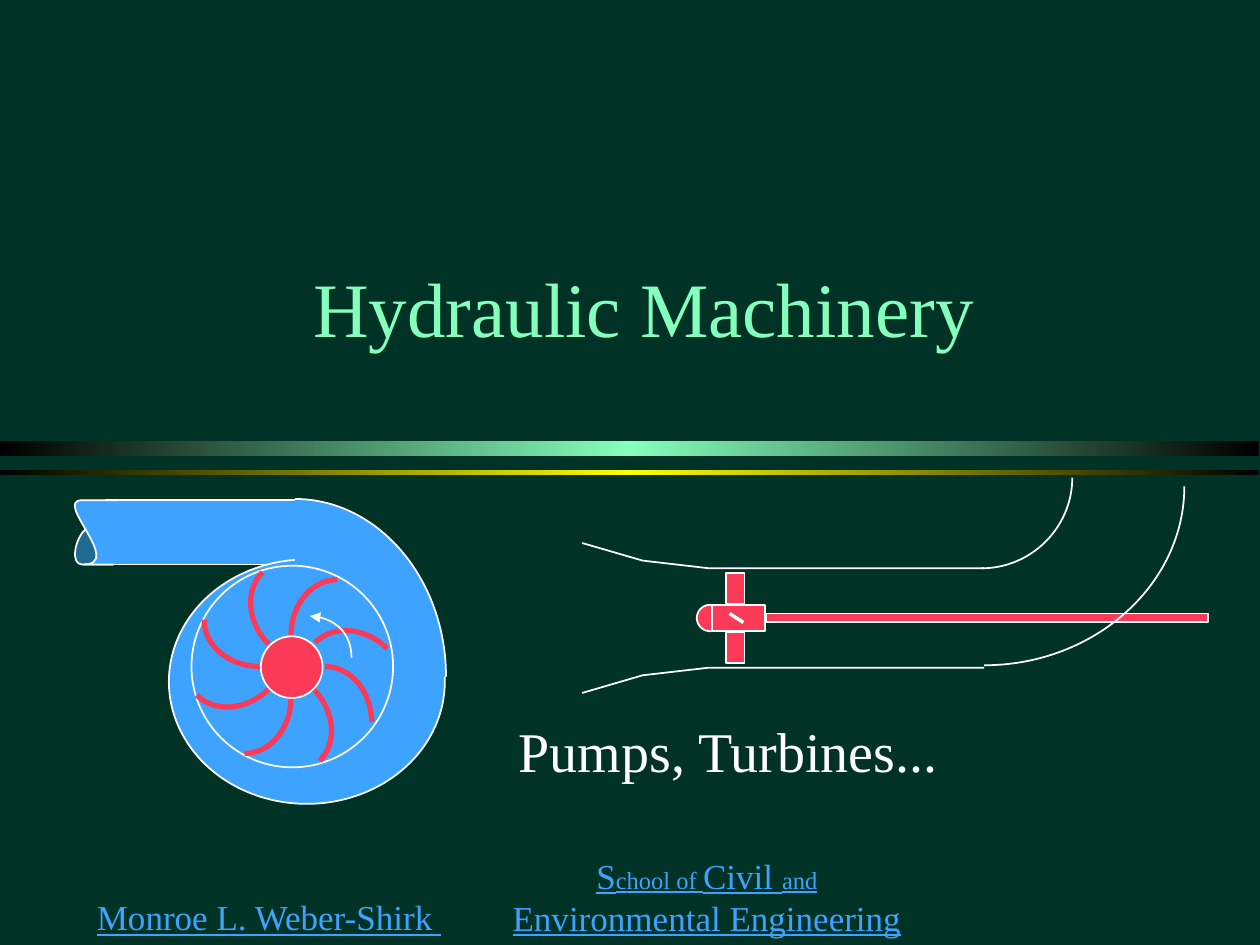
"""Build the Hydraulic Machinery title slide with a pump and a turbine."""
from copy import deepcopy
from math import cos, radians, sin

from pptx import Presentation
from pptx.dml.color import RGBColor
from pptx.enum.shapes import MSO_CONNECTOR, MSO_SHAPE
from pptx.enum.text import MSO_ANCHOR, PP_ALIGN
from pptx.oxml import parse_xml
from pptx.oxml.ns import nsdecls, qn
from pptx.oxml.xmlchemy import OxmlElement
from pptx.util import Inches, Pt

RECT, OVAL = MSO_SHAPE.RECTANGLE, MSO_SHAPE.OVAL
STRAIGHT = MSO_CONNECTOR.STRAIGHT
LEFT, CENTER = PP_ALIGN.LEFT, PP_ALIGN.CENTER
TOP, MIDDLE = MSO_ANCHOR.TOP, MSO_ANCHOR.MIDDLE
FONT = "Times New Roman"
WHITE, BLACK, RED, BLUE = "FFFFFF", "000000", "FA3A57", "3DA3FF"
MINT, YELLOW, GREEN = "85FFBC", "FFFF00", "003225"
ROUND = 0.55
color = RGBColor.from_string

deck = Presentation()
deck.slide_width, deck.slide_height = Inches(10), Inches(7.5)
slide = deck.slides.add_slide(deck.slide_layouts[6])
slide.background.fill.solid()
slide.background.fill.fore_color.rgb = color(GREEN)
shapes = slide.shapes


def write(box, runs, hue, align=CENTER, anchor=TOP, line=False, shade=0, before=0):
    """Add a text box of (text, size) runs."""
    frame = shapes.add_textbox(*map(Inches, box)).text_frame
    frame.word_wrap = True
    frame.vertical_anchor = anchor
    para = frame.paragraphs[0]
    para.alignment = align
    para.space_before = Pt(before)
    for words, size in runs:
        run = para.add_run()
        run.text = words
        font = run.font
        font.name, font.size, font.underline = FONT, Pt(size), line
        font.color.rgb = color(hue)
        if shade:
            run._r.rPr.find(qn("a:solidFill")).addnext(parse_xml(
                f'<a:effectLst {nsdecls("a")}><a:outerShdw dist="{Pt(shade)}" '
                f'dir="2700000"><a:srgbClr val="{BLACK}"/></a:outerShdw></a:effectLst>'))


def bend(start, corner, end):
    """Return the four curve points of a quarter ellipse."""
    pull = [tuple(p + ROUND * (c - p) for p, c in zip(tip, corner))
            for tip in (start, end)]
    return [start, *pull, end]


for top, high, hue in [(3.5, 0.12, MINT), (3.73, 0.04, YELLOW)]:
    bar = shapes.add_shape(RECT, 0, Inches(top), Inches(9.99), Inches(high))
    bar.shadow.inherit = False
    bar.line.fill.background()
    bar.fill.gradient()
    bar.fill.gradient_angle = 0
    stops = bar._element.spPr.find(".//" + qn("a:gsLst"))
    stops.append(deepcopy(stops[0]))
    for stop, spot, tone in zip(bar.fill.gradient_stops, (0, 0.5, 1), (BLACK, hue, BLACK)):
        stop.position = spot
        stop.color.rgb = color(tone)

write((0.67, 7.06, 3.58, 0.42), [("Monroe L. Weber-Shirk ", 20)], BLUE,
      align=LEFT, line=True)
write((3.9, 6.73, 3.42, 0.77),
      [("S", 20), ("chool of ", 14), ("Civil ", 20), ("and", 14),
       (" Environmental Engineering", 20)], BLUE, line=True)
write((0.86, 1.81, 8.5, 1.25), [("Hydraulic Machinery", 44)], MINT,
      anchor=MIDDLE, shade=2)
write((2.28, 5.64, 7, 0.44), [("Pumps, Turbines...", 32)], WHITE, shade=3, before=6)

# Each part: preset or number of curves, box or points, fill, line, width
volute = bend((3.54, 5.37), (3.54, 3.96), (2.34, 3.96))
parts = [
    (0, [(4.62, 4.31), (5.1, 4.45), (5.62, 4.51), (7.81, 4.51)], None, WHITE, 1),
    (0, [(4.62, 5.5), (5.1, 5.36), (5.62, 5.3), (7.81, 5.3)], None, WHITE, 1),
    (RECT, (6.08, 4.87, 3.51, 0.07), RED, WHITE, 1),
    (OVAL, (5.53, 4.8, 0.21, 0.21), RED, WHITE, 1),
    (RECT, (5.65, 4.8, 0.42, 0.21), RED, WHITE, 1),
    (RECT, (5.76, 4.55, 0.15, 0.24), RED, WHITE, 1),
    (RECT, (5.76, 5.02, 0.15, 0.24), RED, WHITE, 1),
    (1, bend((8.51, 3.79), (8.51, 4.51), (7.79, 4.51)), None, WHITE, 1),
    (1, bend((9.4, 3.86), (9.4, 5.28), (7.81, 5.28)), None, WHITE, 1),
    (4, [(0.65, 4.48), (0.56, 4.48), (0.59, 4.28), (0.68, 4.2), (0.72, 4.15),
         (0.87, 4.14), (0.91, 4.19), (0.91, 4.29), (0.91, 4.37), (0.9, 4.48),
         (0.78, 4.48), (0.74, 4.48), (0.65, 4.48)], BLUE + "80", WHITE, 1),
    (RECT, (0.84, 3.97, 1.51, 0.51), BLUE, WHITE, 1),
    (3, [(0.95, 3.97), (0.84, 3.97), (0.76, 3.97), (0.65, 3.97), (0.42, 3.97),
         (0.99, 4.48), (0.66, 4.48), (0.75, 4.48), (0.72, 4.48), (0.9, 4.48)],
     BLUE, WHITE, 1),
    (OVAL, (1.34, 4.44, 2.19, 1.94), BLUE, WHITE, 1),
    (1, volute + [(2.34, 5.37)], BLUE, None, 0),
    (1, volute, None, WHITE, 1),
    (OVAL, (1.52, 4.49, 1.6, 1.6), BLUE, WHITE, 1),
]
for turn in range(-45, 315, 45):
    gap, out, side = (0.27, 0.37, 0.44) if turn <= 0 else (0.25, 0.44, 0.37)
    dx, dy = cos(radians(turn)), sin(radians(turn))
    start, corner = [(2.31 + r * dx, 5.29 + r * dy) for r in (gap, gap + out)]
    end = (corner[0] - side * dy, corner[1] + side * dx)
    parts.append((1, bend(start, corner, end), None, RED, 3))
parts += [
    (OVAL, (2.07, 5.05, 0.49, 0.49), RED, WHITE, 1),
    (1, bend((2.46, 4.89), (2.79, 4.89), (2.79, 5.22)), None, WHITE, 1),
]

for kind, spots, fill, line, width in parts:
    if kind in (RECT, OVAL) and len(spots) == 4 and not isinstance(spots, list):
        shape = shapes.add_shape(kind, *map(Inches, spots))
    else:
        dots = [(Inches(x), Inches(y)) for x, y in spots]
        form = shapes.build_freeform(*dots[0])
        form.add_line_segments(dots[1:], close=fill is not None and line is None)
        shape = form.convert_to_shape()
        track = shape._element.find(".//" + qn("a:path"))
        legs = track.findall(qn("a:lnTo"))
        for at in range(0, 3 * kind, 3):
            curve = OxmlElement("a:cubicBezTo")
            legs[at].addprevious(curve)
            for leg in legs[at:at + 3]:
                curve.append(leg[0])
                track.remove(leg)
    shape.shadow.inherit = False
    if fill:
        shape.fill.solid()
        shape.fill.fore_color.rgb = color(fill[:6])
        if fill[6:]:
            alpha = OxmlElement("a:alpha")
            alpha.set("val", "50000")
            shape._element.spPr.find(".//" + qn("a:srgbClr")).append(alpha)
    else:
        shape.fill.background()
    if line:
        shape.line.color.rgb = color(line)
        shape.line.width = Pt(width)
    else:
        shape.line.fill.background()

arrow = OxmlElement("a:headEnd")
arrow.set("type", "triangle")
shape.line._get_or_add_ln().append(arrow)

blade = shapes.add_connector(STRAIGHT, *map(Inches, (5.79, 4.87, 5.9, 4.94)))
blade.line.color.rgb = color(WHITE)
blade.line.width = Pt(2)
blade._element.spPr.append(OxmlElement("a:effectLst"))

deck.save("out.pptx")
